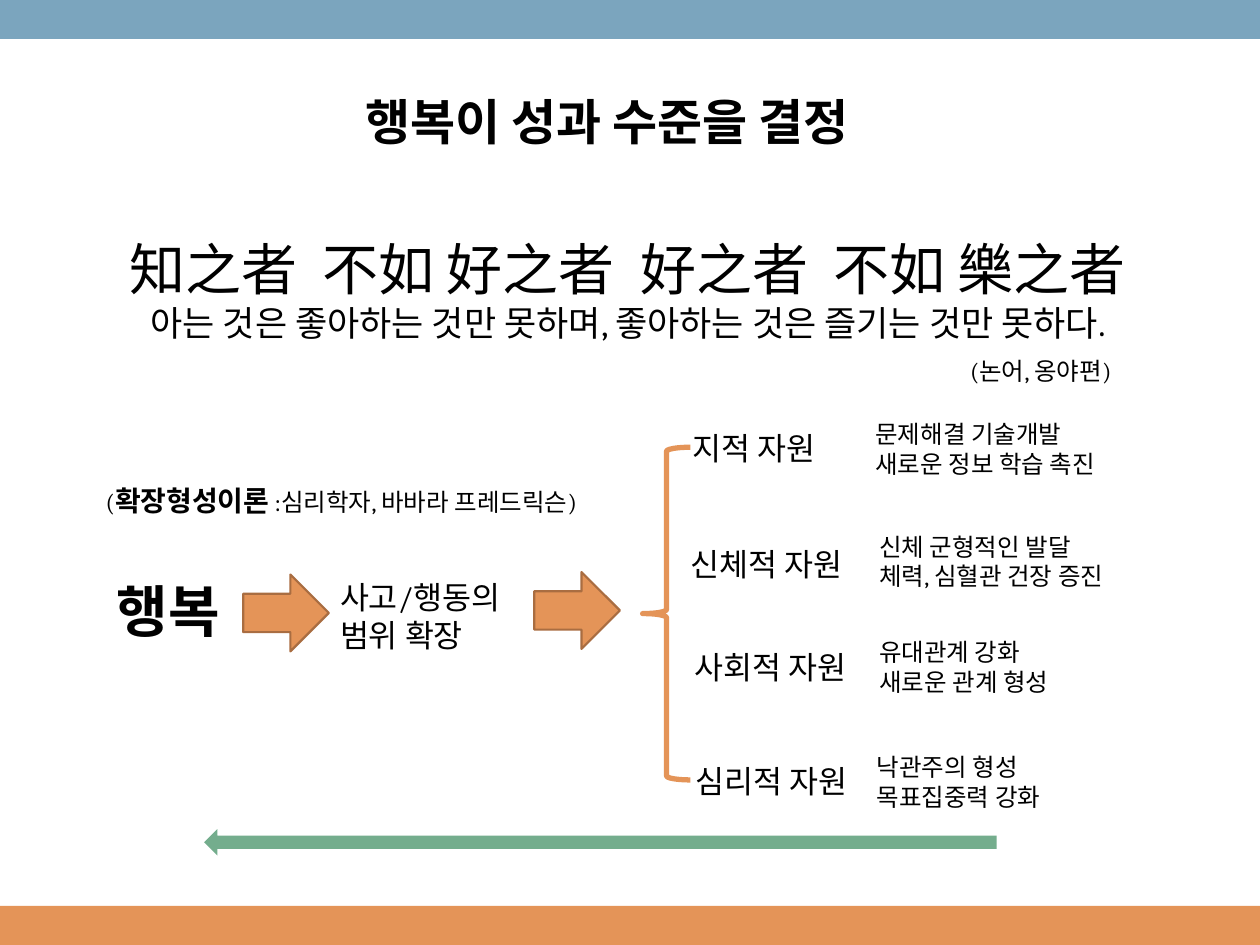
import pptx
import pptx.util
import pptx.dml.color
import pptx.enum.shapes
import pptx.enum.text

SCALE = 9144
SHAPE = pptx.enum.shapes.MSO_SHAPE
ALIGN = pptx.enum.text.PP_ALIGN
ORANGE, BLUE, GREEN, BROWN = "E49458", "7BA5BE", "74AD8D", "A96D41"


def px(*vals):
    return [pptx.util.Emu(v * SCALE) for v in vals]


def paint(color, code):
    color.rgb = pptx.dml.color.RGBColor.from_string(code)


def style(font, size, bold=False, name="Cambria"):
    font.name = name
    font.size = pptx.util.Pt(size)
    font.bold = bold
    paint(font.color, "000000")


def draw(slide, kind, box, fill=None, line=None, width=1):
    shape = slide.shapes.add_shape(kind, *px(*box))
    shape.shadow.inherit = False
    if fill:
        shape.fill.solid()
        paint(shape.fill.fore_color, fill)
    else:
        shape.fill.background()
    if line:
        paint(shape.line.color, line)
        shape.line.width = pptx.util.Pt(width)
    else:
        shape.line.fill.background()


def write(slide, box, lines, size, bold=False, wrap=False):
    frame = slide.shapes.add_textbox(*px(*box)).text_frame
    frame.word_wrap = wrap
    frame.text = "\n".join(lines)
    for para in frame.paragraphs:
        style(para.font, size, bold)
    return frame


def bands(slide, wide, high):
    draw(slide, SHAPE.RECTANGLE, (0, high - 31, wide, 31), ORANGE)
    draw(slide, SHAPE.RECTANGLE, (0, 0, wide, 31), BLUE)


def quote(slide, x, y, w, h):
    frame = write(slide, (x, y, w, h), [
        "知之者  不如 好之者  好之者  不如 樂之者",
        "아는 것은 좋아하는 것만 못하며, 좋아하는 것은 즐기는 것만 못하다."], 20)
    style(frame.paragraphs[0].font, 32, name="Noto Sans CJK KR")
    for para in frame.paragraphs:
        para.alignment = ALIGN.CENTER
    write(slide, (x + 690, y + 97, 142, 34), ["(논어, 옹야편)"], 14, wrap=True)


def theory(slide, x, y, w, h):
    frame = write(slide, (x, y, w, h), [""], 14)
    para = frame.paragraphs[0]
    for text, size, bold in [("(", 14, False), ("확장형성이론", 16, True),
                             (" :심리학자, 바바라 프레드릭슨)", 14, False)]:
        run = para.add_run()
        run.text = text
        style(run.font, size, bold)


def flow(slide, x, y):
    write(slide, (x, y, 110, 64), ["행복"], 32, True)
    write(slide, (x + 177, y + 1, 159, 71), ["사고/행동의", "범위 확장"], 18)
    for dx, dy in [(110, 3), (341, 1)]:
        draw(slide, SHAPE.RIGHT_ARROW, (x + dx, y + dy, 68, 61),
             ORANGE, BROWN, 1.25)


def assets(slide, x, y, h):
    draw(slide, SHAPE.LEFT_BRACE, (x, y, 38, h), line=ORANGE, width=3)
    rows = [
        (30, -19, "지적 자원", 175, -27, ["문제해결 기술개발", "새로운 정보 학습 촉진"]),
        (28, 73, "신체적 자원", 178, 62, ["신체 군형적인 발달", "체력, 심혈관 건장 증진"]),
        (31, 154, "사회적 자원", 178, 146, ["유대관계 강화", "새로운 관계 형성"]),
        (32, 245, "심리적 자원", 176, 237, ["낙관주의 형성", "목표집중력 강화"]),
    ]
    for left, top, label, start, rise, notes in rows:
        write(slide, (x + left, y + top, 155, 40), [label], 18)
        write(slide, (x + start, y + rise, 214, 57), notes, 14)


def main():
    deck = pptx.Presentation()
    deck.slide_width, deck.slide_height = px(1000, 750)
    slide = deck.slides.add_slide(deck.slide_layouts[6])
    bands(slide, 1000, 750)
    write(slide, (280, 68, 439, 57), ["행복이 성과 수준을 결정"], 28, True)
    quote(slide, 70, 181, 857, 98)
    theory(slide, 74, 379, 428, 37)
    flow(slide, 83, 453)
    assets(slide, 510, 355, 264)
    draw(slide, SHAPE.LEFT_ARROW, (162, 658, 629, 21), GREEN)
    deck.save("out.pptx")


if __name__ == "__main__":
    main()
